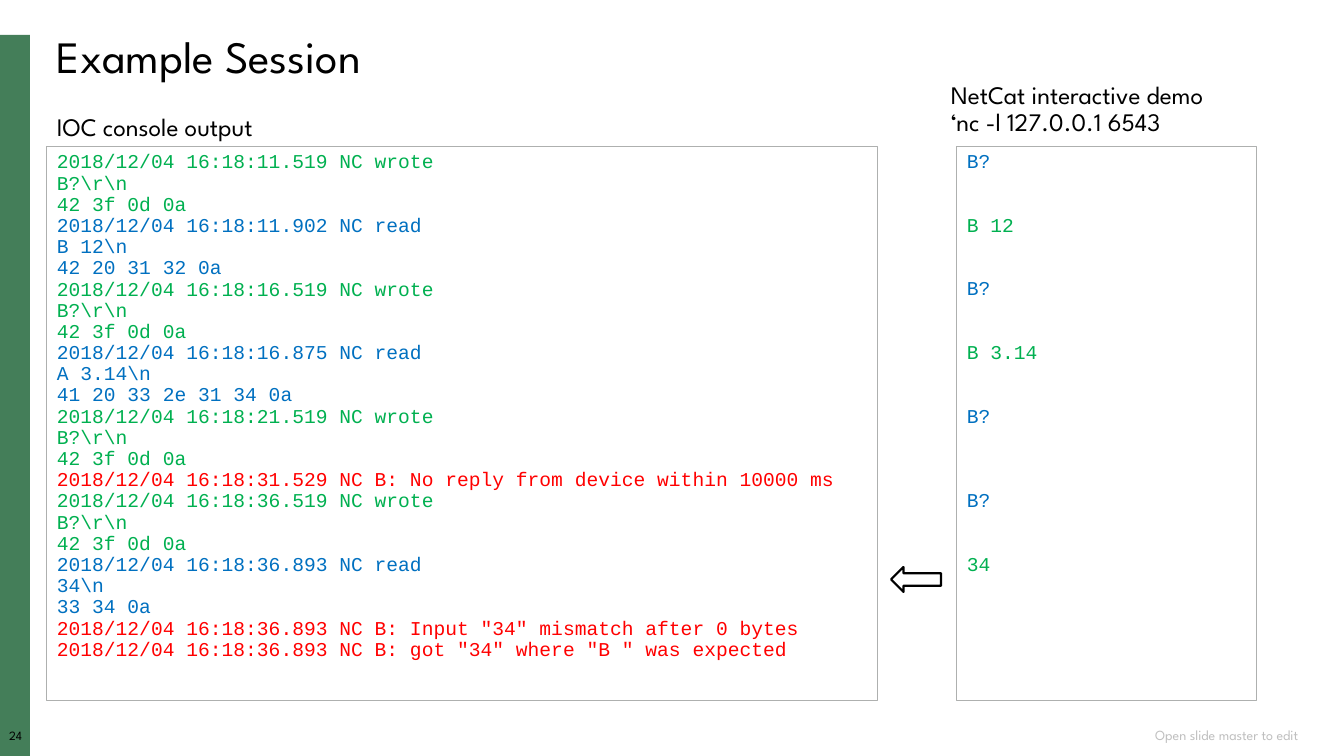
from pptx import Presentation
from pptx.dml.color import RGBColor
from pptx.enum.shapes import MSO_SHAPE as Shape
from pptx.enum.text import MSO_ANCHOR as Anchor, PP_ALIGN as Align
from pptx.util import Emu, Pt

PX = 914400 / 100.8
GREEN, BLUE, RED = "00B050", "0070C0", "FF0000"
BLACK, GREY, FRAME, ACCENT = "000000", "BFBFBF", "AEB0AF", "447E59"
LINE_PITCH = 15.12

CONSOLE = [
    (GREEN, ["2018/12/04 16:18:11.519 NC wrote", r"B?\r\n", "42 3f 0d 0a"]),
    (BLUE, ["2018/12/04 16:18:11.902 NC read", r"B 12\n", "42 20 31 32 0a"]),
    (GREEN, ["2018/12/04 16:18:16.519 NC wrote", r"B?\r\n", "42 3f 0d 0a"]),
    (BLUE, ["2018/12/04 16:18:16.875 NC read", r"A 3.14\n", "41 20 33 2e 31 34 0a"]),
    (GREEN, ["2018/12/04 16:18:21.519 NC wrote", r"B?\r\n", "42 3f 0d 0a"]),
    (RED, ["2018/12/04 16:18:31.529 NC B: No reply from device within 10000 ms"]),
    (GREEN, ["2018/12/04 16:18:36.519 NC wrote", r"B?\r\n", "42 3f 0d 0a"]),
    (BLUE, ["2018/12/04 16:18:36.893 NC read", r"34\n", "33 34 0a"]),
    (RED, ['2018/12/04 16:18:36.893 NC B: Input "34" mismatch after 0 bytes',
           '2018/12/04 16:18:36.893 NC B: got "34" where "B " was expected']),
]
# Console row beside which each line of the demo stands
DEMO = [(0, "B?", BLUE), (3, "B 12", GREEN), (6, "B?", BLUE), (9, "B 3.14", GREEN),
        (12, "B?", BLUE), (16, "B?", BLUE), (19, "34", GREEN)]


def px(length):
    return Emu(round(length * PX))


def rgb(value):
    return RGBColor.from_string(value)


def apply(target, formats):
    for name, value in formats.items():
        setattr(target, name, value)


class SessionSlide:
    font = "League Spartan"
    code_font = "Courier New"

    def __init__(self, deck):
        self.shapes = deck.slides.add_slide(deck.slide_layouts[6]).shapes

    def fill_text(self, shape, lines, size, font, align=Align.LEFT, **frame_formats):
        """Fill a shape with lines of (text, colour, blank rows above)."""
        frame = shape.text_frame
        apply(frame, {"word_wrap": True, "vertical_anchor": Anchor.TOP, **frame_formats})
        for index, (text, color, rows_above) in enumerate(lines):
            paragraph = frame.paragraphs[0] if index == 0 else frame.add_paragraph()
            apply(paragraph, {"alignment": align, "line_spacing": 0.9})
            if rows_above:
                paragraph.space_before = Pt(round(rows_above * LINE_PITCH, 2))
            run = paragraph.add_run()
            run.text = text
            apply(run.font, {"name": font, "size": Pt(size)})
            run.font.color.rgb = rgb(color)

    def label(self, box, lines, size, color=BLACK, **formats):
        textbox = self.shapes.add_textbox(*map(px, box))
        self.fill_text(textbox, [(line, color, 0) for line in lines], size, self.font, **formats)

    def shape(self, kind, box, fill=None, line=None, weight=0.75, rotation=0):
        shape = self.shapes.add_shape(kind, *map(px, box))
        shape.shadow.inherit = False
        shape.rotation = rotation
        if fill:
            shape.fill.solid()
            shape.fill.fore_color.rgb = rgb(fill)
        else:
            shape.fill.background()
        if line:
            shape.line.color.rgb = rgb(line)
            shape.line.width = Pt(weight)
        else:
            shape.line.fill.background()
        return shape

    def terminal(self, box, lines):
        frame = self.shape(Shape.RECTANGLE, box, line=FRAME)
        self.fill_text(frame, lines, 14, self.code_font)


def main():
    deck = Presentation()
    apply(deck, {"slide_width": px(1344), "slide_height": px(756)})
    slide = SessionSlide(deck)

    slide.shape(Shape.RECTANGLE, (0, 35, 30, 721), fill=ACCENT)
    slide.label((0, 730, 31, 17), ["24"], 9, align=Align.CENTER,
                margin_left=0, margin_right=0, margin_top=0, margin_bottom=0)
    slide.label((883, 726, 425, 20), ["Open slide master to edit"], 10, GREY,
                align=Align.RIGHT, vertical_anchor=Anchor.MIDDLE)
    slide.label((47, 30, 1260, 59), ["Example Session"], 32)

    demo_rows = [row for row, _, _ in DEMO]
    gaps = [0] + [row - above - 1 for above, row in zip(demo_rows, demo_rows[1:])]
    slide.terminal((957, 147, 300, 554),
                   [(text, color, gap) for (_, text, color), gap in zip(DEMO, gaps)])
    slide.terminal((47, 147, 831, 554),
                   [(text, color, 0) for color, texts in CONSOLE for text in texts])

    slide.label((47, 110, 262, 37), ["IOC console output"], 18)
    slide.label((941, 78, 332, 65), ["NetCat interactive demo", "‘nc -l 127.0.0.1 6543"], 18)
    slide.shape(Shape.RIGHT_ARROW, (891, 567, 50, 25), line=BLACK, weight=1.5, rotation=180)

    deck.save("out.pptx")


if __name__ == "__main__":
    main()
